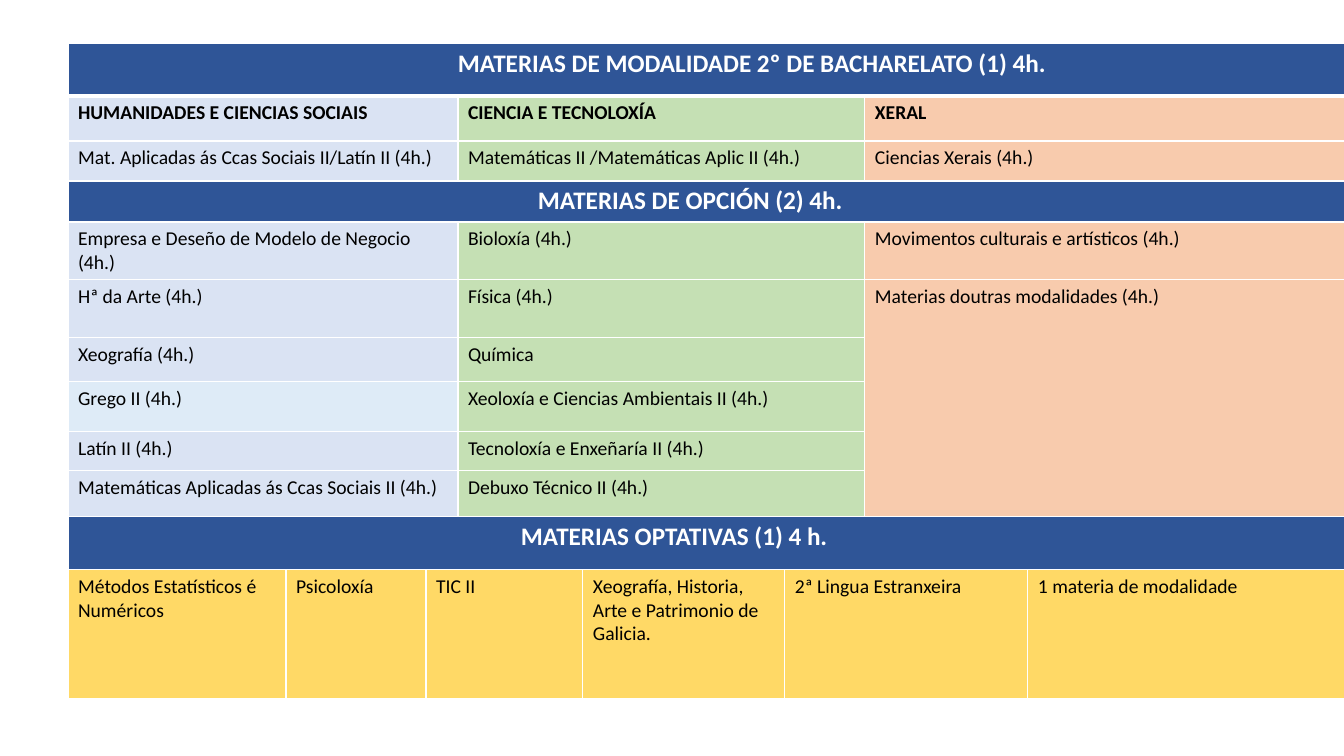
from lxml import etree
from pptx import Presentation
from pptx import util as u
from pptx.dml.color import RGBColor
from pptx.oxml import ns

PX = 914400 / 100.8
BLUE, LILAC, SKY = "2F5597", "DAE3F3", "DEEBF7"
GREEN, PEACH, YELLOW = "C5E0B4", "F8CBAD", "FFD966"
WHITE, BLACK = "FFFFFF", "000000"


def px(length):
    return u.Emu(round(length * PX))


def rgb(code):
    return RGBColor.from_string(code)


deck = Presentation()
deck.slide_width, deck.slide_height = px(1344), px(756)
slide = deck.slides.add_slide(deck.slide_layouts[6])

# Table grid
widths = [218, 140, 32, 125, 202, 80, 163, 250]
heights = [53, 45, 40, 41, 57, 58, 44, 50, 39, 46, 53, 129]
subjects = slide.shapes.add_table(len(heights), len(widths), px(68), px(43),
                                  px(sum(widths)), px(sum(heights))).table
subjects.first_row = subjects.horz_banding = False
for column, width in zip(subjects.columns, widths):
    column.width = px(width)
for row, height in zip(subjects.rows, heights):
    row.height = px(height)

# White borders, thicker under the main heading
for r in range(len(heights)):
    for c in range(len(widths)):
        borders = subjects.cell(r, c)._tc.get_or_add_tcPr()
        for side in "LRTB":
            thick = (r, side) in ((0, "B"), (1, "T"))
            line = etree.SubElement(borders, ns.qn(f"a:ln{side}"),
                                    w=str(u.Pt(3 if thick else 1)))
            fill = etree.SubElement(line, ns.qn("a:solidFill"))
            etree.SubElement(fill, ns.qn("a:srgbClr"), val=WHITE)

# Section headings: row, left indent, wording
headings = [
    (0, 390, "MATERIAS DE MODALIDADE 2º DE BACHARELATO (1) 4h."),
    (3, 470, "MATERIAS DE OPCIÓN (2) 4h."),
    (10, 453, "MATERIAS OPTATIVAS (1) 4 h."),
]

# Subjects by branch: one row each, three columns
branches = {
    1: ("HUMANIDADES E CIENCIAS SOCIAIS", "CIENCIA E TECNOLOXÍA", "XERAL"),
    2: ("Mat. Aplicadas ás Ccas Sociais II/Latín II (4h.)",
        "Matemáticas II /Matemáticas Aplic II (4h.)", "Ciencias Xerais (4h.)"),
    4: ("Empresa e Deseño de Modelo de Negocio (4h.)", "Bioloxía (4h.)",
        "Movimentos culturais e artísticos (4h.)"),
    5: ("Hª da Arte (4h.)", "Física (4h.)", "Materias doutras modalidades (4h.)"),
    6: ("Xeografía (4h.)", "Química"),
    7: ("Grego II (4h.)", "Xeoloxía e Ciencias Ambientais II (4h.)"),
    8: ("Latín II (4h.)", "Tecnoloxía e Enxeñaría II (4h.)"),
    9: ("Matemáticas Aplicadas ás Ccas Sociais II (4h.)", "Debuxo Técnico II (4h.)"),
}

# Optional subjects: first column, column span, wording
optionals = [
    (0, 1, "Métodos Estatísticos é Numéricos"),
    (1, 1, "Psicoloxía"),
    (2, 2, "TIC II"),
    (4, 1, "Xeografía, Historia, Arte e Patrimonio de Galicia."),
    (5, 2, "2ª Lingua Estranxeira"),
    (7, 1, "1 materia de modalidade"),
]

# Every visible cell: row, column, row span, column span, fill, wording
entries = [(r, 0, 1, 8, BLUE, wording) for r, _, wording in headings]
for r, names in branches.items():
    for c, span, color, name in zip((0, 3, 6), (3, 3, 2), (LILAC, GREEN, PEACH), names):
        depth = 5 if (r, c) == (5, 6) else 1
        entries.append((r, c, depth, span, SKY if (r, c) == (7, 0) else color, name))
entries += [(11, c, 1, span, YELLOW, name) for c, span, name in optionals]

for r, c, depth, span, color, wording in entries:
    cell = subjects.cell(r, c)
    if depth * span > 1:
        cell.merge(subjects.cell(r + depth - 1, c + span - 1))
    cell.fill.solid()
    cell.fill.fore_color.rgb = rgb(color)
    cell.text_frame.text = wording
    font = cell.text_frame.paragraphs[0].runs[0].font
    font.name = "Calibri"
    font.size = u.Pt(18 if color == BLUE else 14)
    font.bold = color == BLUE or r == 1
    font.color.rgb = rgb(WHITE if color == BLUE else BLACK)

for r, indent, _ in headings:
    subjects.cell(r, 0).margin_left = px(indent)

deck.save("out.pptx")
